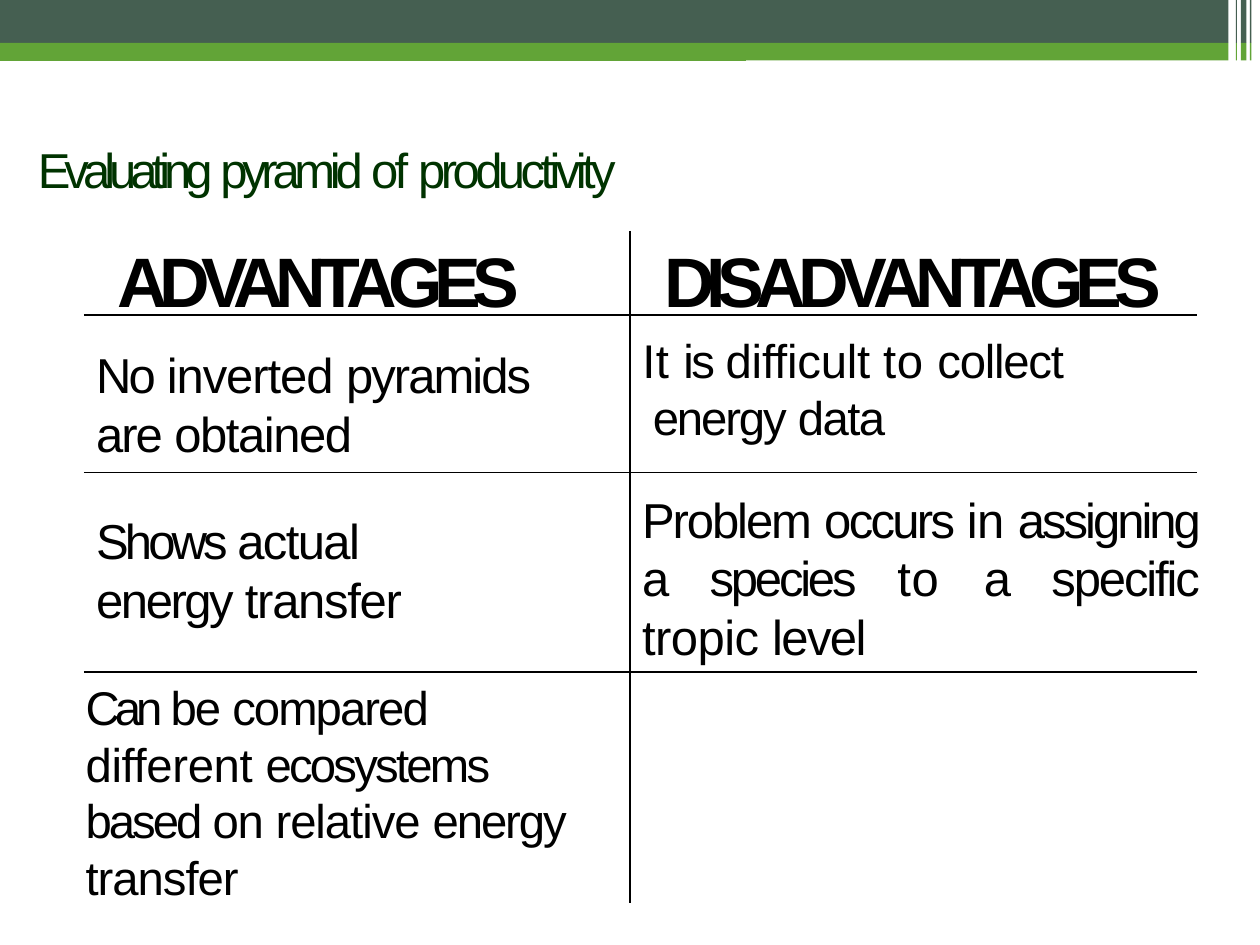
"""Build the slide that weighs up the pyramid of productivity."""
from lxml.etree import SubElement
from pptx import Presentation
from pptx.dml.color import RGBColor
from pptx.enum.shapes import MSO_CONNECTOR, MSO_SHAPE
from pptx.enum.text import PP_ALIGN
from pptx.oxml.ns import qn
from pptx.util import Pt

HUES = {"dark": "455F51", "green": "62A437", "title": "003300", "ink": "000000"}

deck = Presentation()
deck.slide_width, deck.slide_height = Pt(720), Pt(540)
slide = deck.slides.add_slide(deck.slide_layouts[6])
shapes = slide.shapes


def add_line(x1, y1, x2, y2, hue, width):
    line = shapes.add_connector(
        MSO_CONNECTOR.STRAIGHT, Pt(x1), Pt(y1), Pt(x2), Pt(y2))
    line.line.color.rgb = RGBColor.from_string(HUES[hue])
    line.line.width = Pt(width)
    SubElement(line._element.spPr, qn("a:effectLst"))


def add_text(box, size, runs, hue="ink", bold=False, left=1, hang=0,
             align=PP_ALIGN.LEFT, lead=None):
    frame = shapes.add_textbox(*map(Pt, box)).text_frame
    frame.word_wrap = True
    frame.margin_left = frame.margin_right = frame.margin_bottom = 0
    frame.margin_top = Pt(1)
    para = frame.paragraphs[0]
    props = para._p.get_or_add_pPr()
    props.set("marL", str(Pt(left)))
    props.set("indent", str(Pt(hang)))
    para.alignment = align
    if lead:
        para.line_spacing = Pt(lead)
    for words, gap in runs:
        run = para.add_run()
        run.text = words
        run.font.name = "Arial"
        run.font.size = Pt(size)
        run.font.bold = bold
        run.font.color.rgb = RGBColor.from_string(HUES[hue])
        run._r.get_or_add_rPr().set("spc", str(round(gap * 100)))


add_line(0, 33.1, 426.2, 33.1, "green", 4.08)
for x, wide in [(0, 702), (706.2, 0.6), (709, 3.2), (714.2, 0.9)]:
    for y, high, hue in [(0, 24.5, "dark"), (24.5, 10, "green")]:
        bar = shapes.add_shape(
            MSO_SHAPE.RECTANGLE, Pt(x), Pt(y), Pt(wide), Pt(high))
        bar.shadow.inherit = False
        bar.fill.solid()
        bar.fill.fore_color.rgb = RGBColor.from_string(HUES[hue])
        bar.line.fill.background()

add_text((18, 78.5, 683, 103), 28, [
    ("Evaluating ", -3.4), ("pyramid ", -3), ("of ", -2.1),
    ("productivity", -2.6)], hue="title", left=3.6)

add_line(360, 132, 360, 516, "ink", 0.93)
for y in (180, 270, 384):
    add_line(48, y, 684, y, "ink", 0.93)

for x, word, gap in [(66, "ADVANTAGES", -4.9), (378.5, "DISADVANTAGES", -4.7)]:
    add_text((x, 134.5, 312, 50), 40, [(word, gap)], bold=True)

add_text((54, 196, 291, 69), 28, [
    ("No ", -1.6), ("inverted ", -0.6), ("pyramids ", -1.1), ("are ", -1.2),
    ("obtained", -0.8)], lead=33.5)

add_text((366, 188.5, 300, 67), 27, [
    ("It ", 0.3), ("is ", -1.4), ("difficult ", -0.1), ("to ", 0.3),
    ("collect ", -0.7), ("energy ", -1.2), ("data", -0.9)], left=7, hang=-6)

add_text((54, 291, 234.5, 69), 28, [
    ("Shows ", -2.2), ("actual ", -0.9), ("energy ", -1.4),
    ("transfer", -0.7)])

add_text((366, 278.5, 318.5, 103), 28, [
    ("Problem ", -1.2), ("occurs ", -1.5), ("in ", -0.4), ("assigning ", -1.7),
    ("a ", -2.2), ("species ", -1.8), ("to ", 0.3), ("a ", -2.2),
    ("specific ", -1.2), ("tropic ", -0.3), ("level", -0.9)],
    align=PP_ALIGN.JUSTIFY)

add_text((48, 386.5, 296.5, 130), 27, [
    ("Can ", -2.8), ("be ", -1.2), ("compared ", -1.1), ("different ", -0.2),
    ("ecosystems ", -1.6), ("based ", -1.7), ("on ", -0.8),
    ("relative ", -0.6), ("energy ", -1.2), ("transfer", -0.6)])

deck.save("out.pptx")
